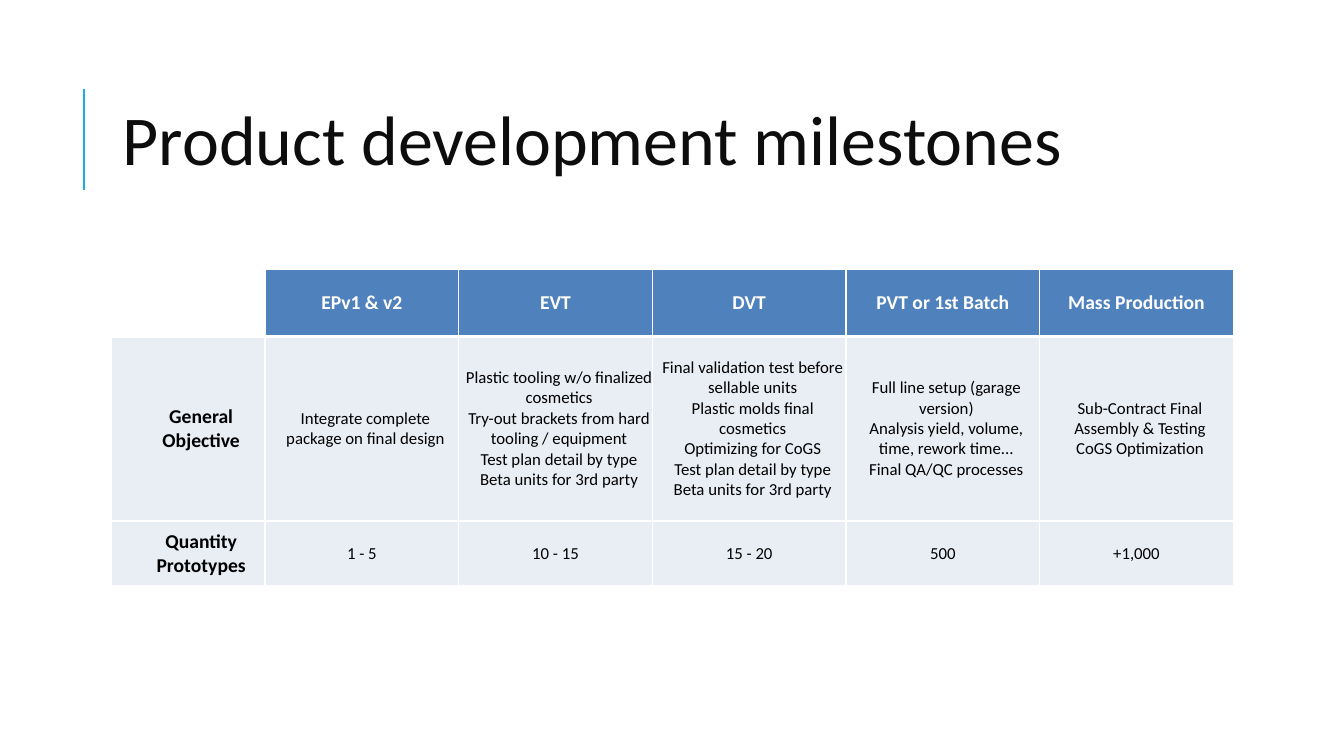
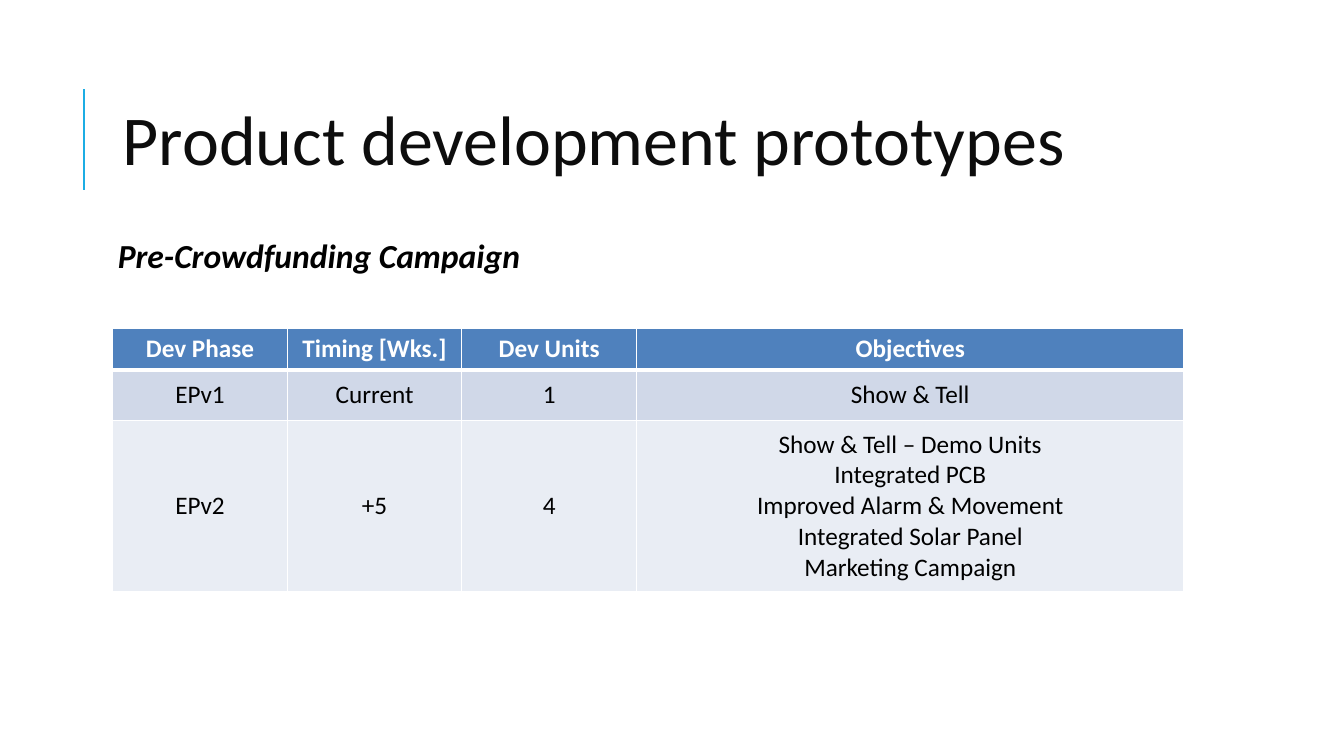
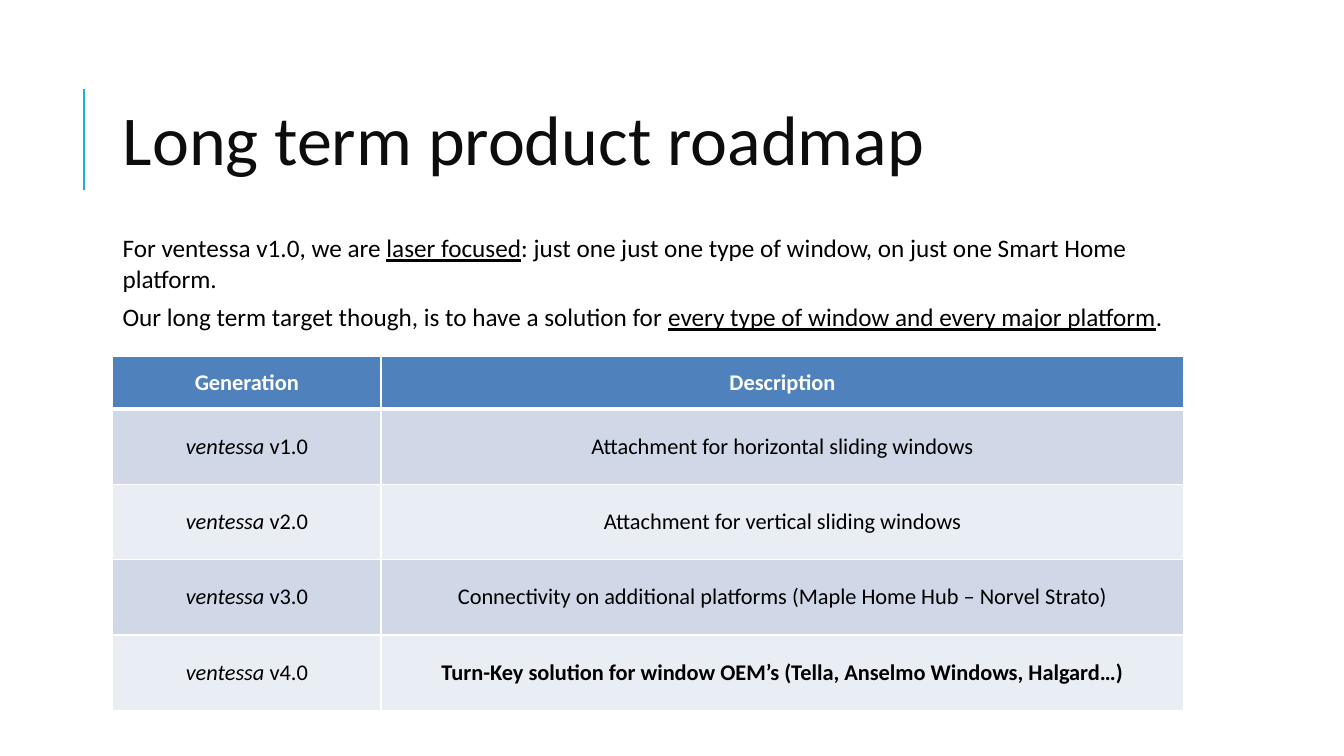
from lxml import etree
from pptx import Presentation
from pptx import util as u
from pptx.dml.color import RGBColor
from pptx.enum import shapes, text
from pptx.oxml.ns import qn

Cm, Pt = u.Cm, u.Pt

COLOURS = {
    "accent": "1CADE4",
    "title": "0D0D0D",
    "text": "000000",
    "white": "FFFFFF",
    "header": "4F81BD",
    "band": "D0D8E8",
    "pale": "E9EDF4",
}
FONT = "Calibri"
LEFT, WIDTH = 2.84, 27


def colour(name):
    return RGBColor.from_string(COLOURS[name])


class Deck:
    """The shared style and the slide being filled."""

    def __init__(self):
        self.deck = Presentation()
        self.deck.slide_width, self.deck.slide_height = Cm(33.87), Cm(19.05)
        self.page = None

    def add_page(self, title):
        self.page = self.deck.slides.add_slide(self.deck.slide_layouts[5])
        self.rule(2.11, 4.78, 2.11, 2.24)
        box = self.page.shapes.title
        box.left, box.top, box.width, box.height = Cm(LEFT), Cm(1.57), Cm(WIDTH), Cm(4.17)
        frame = box.text_frame
        frame.auto_size = text.MSO_AUTO_SIZE.NONE
        frame.vertical_anchor = text.MSO_ANCHOR.MIDDLE
        self.fill_text(frame, [title], 50, "title")
        frame.paragraphs[0].line_spacing = 0.8

    def rule(self, x1, y1, x2, y2):
        line = self.page.shapes.add_connector(
            shapes.MSO_CONNECTOR.STRAIGHT, Cm(x1), Cm(y1), Cm(x2), Cm(y2))
        line.line.color.rgb = colour("accent")
        line.line.width = Pt(1.5)
        etree.SubElement(line._element.spPr, qn("a:effectLst"))

    def fill_text(self, frame, paras, size, ink="text", bold=False, italic=False,
                  align=text.PP_ALIGN.LEFT):
        """Each paragraph is a string or a list of (text, style) spans; styles: b, i, u."""
        for index, content in enumerate(paras):
            para = frame.add_paragraph() if index else frame.paragraphs[0]
            para.alignment = align
            font = para.font
            font.name, font.size, font.bold, font.italic = FONT, Pt(size), bold, italic
            font.color.rgb = colour(ink)
            if isinstance(content, str):
                para.text = content
                continue
            for words, style in content:
                span = para.add_run()
                span.text = words
                if "b" in style:
                    span.font.bold = True
                if "i" in style:
                    span.font.italic = True
                if "u" in style:
                    span.font.underline = True

    def text_box(self, top, height, paras, size, margin=0.25, **style):
        box = self.page.shapes.add_textbox(Cm(LEFT), Cm(top), Cm(WIDTH), Cm(height))
        frame = box.text_frame
        frame.word_wrap = True
        frame.margin_left = frame.margin_right = Cm(margin)
        self.fill_text(frame, paras, size, **style)
        return frame

    def borders(self, cell, top, bottom):
        cell_props = cell._tc.get_or_add_tcPr()
        for side, width in (("L", 1), ("R", 1), ("T", top), ("B", bottom)):
            line = etree.SubElement(cell_props, qn("a:ln" + side), w=str(Pt(width)))
            fill = etree.SubElement(line, qn("a:solidFill"))
            etree.SubElement(fill, qn("a:srgbClr"), val=COLOURS["white"])

    def table(self, left, top, columns, heights, rows, size, header_size=None,
              side_size=None, bands=("band", "pale"), margins=None):
        """A header row, banded rows and, with side_size, a bold first column."""
        grid = self.page.shapes.add_table(
            len(rows), len(columns), Cm(left), Cm(top),
            Cm(sum(columns)), Cm(sum(heights))).table
        for column, width in zip(grid.columns, columns):
            column.width = Cm(width)
        for r, row in enumerate(rows):
            grid.rows[r].height = Cm(heights[r])
            for c, paras in enumerate(row):
                cell = grid.cell(r, c)
                cell.vertical_anchor = text.MSO_ANCHOR.MIDDLE
                if margins is not None:
                    cell.margin_left = cell.margin_right = Cm(margins)
                    cell.margin_top = cell.margin_bottom = Cm(margins)
                self.borders(cell, 3 if r == 1 else 1, 3 if r == 0 else 1)
                if not paras:
                    cell.fill.background()
                    continue
                cell.fill.solid()
                cell.fill.fore_color.rgb = colour(
                    bands[(r - 1) % len(bands)] if r else "header")
                side = bool(side_size) and c == 0
                cell_size = (header_size or size) if r == 0 else side_size if side else size
                self.fill_text(cell.text_frame, paras, cell_size,
                               ink="text" if r else "white", bold=r == 0 or side,
                               align=text.PP_ALIGN.CENTER)
        return grid


def milestones(deck):
    deck.add_page("Product development milestones")
    rows = [
        [[], ["EPv1 & v2"], ["EVT"], ["DVT"], ["PVT or 1st Batch"], ["Mass Production"]],
        [
            ["General", "Objective"],
            ["Integrate complete package on final design"],
            ["Plastic tooling w/o finalized cosmetics\v"
             "Try-out brackets from hard tooling / equipment\v"
             "Test plan detail by type\vBeta units for 3rd party"],
            ["Final validation test before sellable units\v"
             "Plastic molds final cosmetics\vOptimizing for CoGS\v"
             "Test plan detail by type\vBeta units for 3rd party"],
            ["Full line setup (garage version)\v"
             "Analysis yield, volume, time, rework time...\vFinal QA/QC processes"],
            ["Sub-Contract Final Assembly & Testing\vCoGS Optimization"],
        ],
        [["Quantity", "Prototypes"], ["1 - 5"], ["10 - 15"], ["15 - 20"], ["500"], ["+1,000"]],
    ]
    grid = deck.table(2.82, 6.78, [3.86] + [4.88] * 5, [1.7, 4.65, 1.63], rows, 12,
                      header_size=14, side_size=14, bands=("pale",), margins=0)
    # Indents of the objectives and of the row headings
    for c in range(1, len(grid.columns)):
        grid.cell(1, c).margin_left = Cm(0.18)
    for r in (1, 2):
        grid.cell(r, 0).margin_left = Cm(0.64)


def prototypes(deck):
    deck.add_page("Product development prototypes")
    deck.text_box(5.79, 11.18, ["Pre-Crowdfunding Campaign"], 24, margin=0.13,
                  bold=True, italic=True)
    rows = [
        [["Dev Phase"], ["Timing [Wks.]"], ["Dev Units"], ["Objectives"]],
        [["EPv1"], ["Current"], ["1"], ["Show & Tell"]],
        [["EPv2"], ["+5"], ["4"],
         ["Show & Tell – Demo Units", "Integrated PCB", "Improved Alarm & Movement",
          "Integrated Solar Panel", "Marketing Campaign"]],
    ]
    deck.table(LEFT, 8.28, [4.4] * 3 + [13.8], [1.04, 1.27, 4.32], rows, 18)


def roadmap(deck):
    deck.add_page("Long term product roadmap")
    descriptions = [
        "Attachment for horizontal sliding windows",
        "Attachment for vertical sliding windows",
        "Connectivity on additional platforms (Maple Home Hub – Norvel Strato)",
        [("Turn-Key solution for window OEM’s (Tella, Anselmo Windows, Halgard…)", "b")],
    ]
    rows = [[["Generation"], ["Description"]]]
    for version, description in enumerate(descriptions, 1):
        rows.append([[[("ventessa", "i"), (f" v{version}.0", "")]], [description]])
    deck.table(LEFT, 8.99, [6.76, 20.24], [1.31] + [1.9] * 4, rows, 16)

    # Introduction above the table
    frame = deck.text_box(5.74, 2.77, [
        [("For ventessa v1.0, we are ", ""), ("laser focused", "u"),
         (": just one just one type of window, on just one Smart Home platform.", "")],
        [("Our long term target though, is to have a solution for ", ""),
         ("every type of window and every major platform", "u"), (".", "")],
    ], 18)
    for para, gap in zip(frame.paragraphs, (6, 18)):
        para.space_after = Pt(gap)


def main():
    deck = Deck()
    milestones(deck)
    prototypes(deck)
    roadmap(deck)
    deck.deck.save("out.pptx")


if __name__ == "__main__":
    main()
